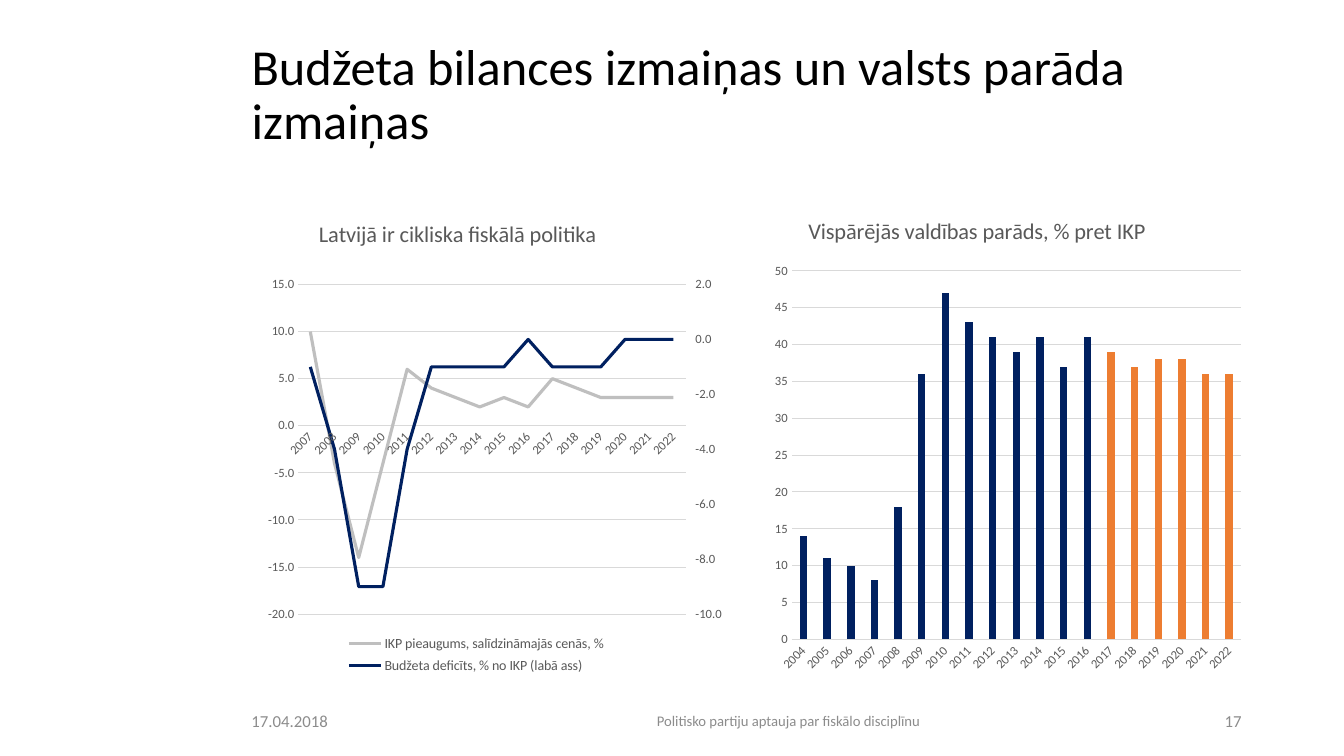
from copy import deepcopy
from dataclasses import dataclass
from typing import Any, Optional

from lxml.etree import SubElement
from pptx import Presentation
from pptx.chart.axis import CategoryAxis, ValueAxis
from pptx.chart.chart import Chart
from pptx.chart.data import CategoryChartData
from pptx.dml.color import RGBColor
from pptx.enum.chart import XL_CHART_TYPE, XL_LEGEND_POSITION, XL_TICK_MARK
from pptx.enum.text import MSO_ANCHOR, MSO_AUTO_SIZE, PP_ALIGN
from pptx.oxml.ns import qn
from pptx.util import Emu, Pt

EMU_PER_PX = 9525


@dataclass(frozen=True)
class Theme:
    font: str = "Calibri"
    black: str = "000000"
    label: str = "595959"
    footer: str = "8C8C8C"
    rule: str = "D9D9D9"
    grey: str = "BFBFBF"
    navy: str = "002060"
    orange: str = "ED7D31"
    title_size: float = 36
    chart_title_size: float = 16
    footer_size: float = 12
    event_size: float = 10.5
    legend_size: float = 10
    axis_size: float = 9


@dataclass(frozen=True)
class Box:
    left: int
    top: int
    width: int
    height: int

    def emu(self) -> list[Emu]:
        return [Emu(side * EMU_PER_PX) for side in (self.left, self.top, self.width, self.height)]


@dataclass(frozen=True)
class FooterPart:
    text: str
    box: Box
    size: float
    align: PP_ALIGN


@dataclass(frozen=True)
class ChartPart:
    """The title and plot places are px from the chart's top left corner."""
    title: str
    kind: XL_CHART_TYPE
    box: Box
    title_at: tuple[int, int]
    plot_at: tuple[int, int, int, int]
    first_year: int
    series: dict[str, list[int]]
    low: int
    high: int
    number_format: str


THEME = Theme()
TITLE = "Budžeta bilances izmaiņas un valsts parāda izmaiņas"
TITLE_BOX = Box(230, 38, 962, 107)
LEGEND_AT = (92, 408, 265, 47)
LAST_YEAR = 2022
FIRST_FORECAST_YEAR = 2017

FOOTER = [
    FooterPart("17.04.2018", Box(230, 667, 157, 38), THEME.footer_size, PP_ALIGN.LEFT),
    FooterPart("Politisko partiju aptauja par fiskālo disciplīnu",
               Box(413, 667, 676, 38), THEME.event_size, PP_ALIGN.CENTER),
    FooterPart("17", Box(1116, 667, 76, 38), THEME.footer_size, PP_ALIGN.RIGHT),
]
BALANCE = ChartPart(
    "Latvijā ir cikliska fiskālā politika", XL_CHART_TYPE.LINE, Box(229, 192, 482, 457),
    (71, 13), (55, 79, 369, 314), 2007,
    {"IKP pieaugums, salīdzināmajās cenās, %":
        [10, -4, -14, -4, 6, 4, 3, 2, 3, 2, 5, 4, 3, 3, 3, 3],
     "Budžeta deficīts, % no IKP (labā ass)":
        [-1, -4, -9, -9, -4, -1, -1, -1, -1, 0, -1, -1, -1, 0, 0, 0]},
    -20, 15, "0.0")
DEBT = ChartPart(
    "Vispārējās valdības parāds, % pret IKP", XL_CHART_TYPE.COLUMN_CLUSTERED,
    Box(730, 192, 463, 457), (36, 10), (24, 66, 428, 351), 2004,
    {"Series 1": [14, 11, 10, 8, 18, 36, 47, 43, 41, 39, 41, 37, 41, 39, 37, 38, 38, 36, 36]},
    0, 50, "#,##0")


def assign(target: Any, values: dict[str, Any]) -> None:
    for name, value in values.items():
        setattr(target, name, value)


def style_font(font: Any, size: float, color: str) -> None:
    assign(font, {"name": THEME.font, "size": Pt(size), "bold": False})
    font.color.rgb = RGBColor.from_string(color)


def style_line(line: Any, color: str, width: float) -> None:
    line.color.rgb = RGBColor.from_string(color)
    line.width = Pt(width)


def style_fill(fill: Any, color: str) -> None:
    fill.solid()
    fill.fore_color.rgb = RGBColor.from_string(color)


def write(shape: Any, text: str, size: float, color: str, align: PP_ALIGN) -> Any:
    frame = shape.text_frame
    assign(frame, {"word_wrap": True, "auto_size": MSO_AUTO_SIZE.NONE,
                   "vertical_anchor": MSO_ANCHOR.MIDDLE})
    para = frame.paragraphs[0]
    para.alignment = align
    span = para.add_run()
    span.text = text
    style_font(span.font, size, color)
    return para


def place(element: Any, index: int, chart_box: Box, at: tuple[int, ...],
          inner: bool = False) -> None:
    """Give a chart part a fixed place, in px inside the chart."""
    for old in element.findall(qn("c:layout")):
        element.remove(old)
    layout = element.makeelement(qn("c:layout"))
    element.insert(index, layout)
    manual = SubElement(layout, qn("c:manualLayout"))
    if inner:
        SubElement(manual, qn("c:layoutTarget")).set("val", "inner")
    for side in ("xMode", "yMode"):
        SubElement(manual, qn(f"c:{side}")).set("val", "edge")
    for side, length, whole in zip("xywh", at, (chart_box.width, chart_box.height) * 2):
        SubElement(manual, qn(f"c:{side}")).set("val", str(length / whole))


def add_chart(page: Any, part: ChartPart) -> Chart:
    data = CategoryChartData(number_format=part.number_format)
    data.categories = [str(year) for year in range(part.first_year, LAST_YEAR + 1)]
    for name, values in part.series.items():
        data.add_series(name, values)
    chart = page.shapes.add_chart(part.kind, *part.box.emu(), data).chart
    style_font(chart.font, THEME.legend_size, THEME.black)
    chart.has_legend = False
    chart.plots[0].vary_by_categories = False

    # Title and plot area
    chart.has_title = True
    para = chart.chart_title.text_frame.paragraphs[0]
    span = para.add_run()
    span.text = part.title
    style_font(span.font, THEME.chart_title_size, THEME.label)
    chart.chart_title.include_in_layout = False
    place(chart.chart_title._element, 1, part.box, part.title_at)
    place(chart._chartSpace.chart.plotArea, 0, part.box, part.plot_at, inner=True)

    # Axes
    for axis in (chart.category_axis, chart.value_axis):
        assign(axis, {"major_tick_mark": XL_TICK_MARK.NONE, "minor_tick_mark": XL_TICK_MARK.NONE})
        style_font(axis.tick_labels.font, THEME.axis_size, THEME.label)
    years, scale = chart.category_axis, chart.value_axis
    style_line(years.format.line, THEME.rule, 0.75)
    years._element.find(qn("c:txPr")).find(qn("a:bodyPr")).set("rot", "-2700000")
    assign(scale, {"minimum_scale": part.low, "maximum_scale": part.high, "major_unit": 5,
                   "has_major_gridlines": True})
    assign(scale.tick_labels, {"number_format": part.number_format,
                               "number_format_is_linked": False})
    style_line(scale.major_gridlines.format.line, THEME.rule, 0.75)
    scale.format.line.fill.background()
    return chart


def add_right_axis(chart: Chart, low: int, high: int, unit: int) -> None:
    """Move the last series to a second value axis on the right."""
    left_plot = chart.plots[0]._element
    right_plot = deepcopy(left_plot)
    left_plot.remove(left_plot.findall(qn("c:ser"))[-1])
    right_plot.remove(right_plot.find(qn("c:ser")))
    left_plot.addnext(right_plot)
    years, scale = (deepcopy(axis._element) for axis in (chart.category_axis, chart.value_axis))
    year_id, scale_id = "50010", "50020"
    for reference, number in zip(right_plot.findall(qn("c:axId")), (year_id, scale_id)):
        reference.set("val", number)
    for element, own, other in ((years, year_id, scale_id), (scale, scale_id, year_id)):
        element.find(qn("c:axId")).set("val", own)
        element.find(qn("c:crossAx")).set("val", other)
    chart.value_axis._element.addnext(scale)
    scale.addnext(years)
    CategoryAxis(years).visible = False
    scale.find(qn("c:axPos")).set("val", "r")
    scale.find(qn("c:crosses")).set("val", "max")
    assign(ValueAxis(scale), {"has_major_gridlines": False, "minimum_scale": low,
                              "maximum_scale": high, "major_unit": unit,
                              "major_tick_mark": XL_TICK_MARK.OUTSIDE})


def draw_balance(page: Any) -> None:
    chart = add_chart(page, BALANCE)
    for series, color in zip(chart.plots[0].series, (THEME.grey, THEME.navy)):
        series.smooth = False
        style_line(series.format.line, color, 2.25)
    add_right_axis(chart, -10, 2, 2)
    chart.has_legend = True
    assign(chart.legend, {"position": XL_LEGEND_POSITION.BOTTOM, "include_in_layout": False})
    style_font(chart.legend.font, THEME.legend_size, THEME.label)
    place(chart.legend._element, 1, BALANCE.box, LEGEND_AT)


def draw_debt(page: Any) -> None:
    plot = add_chart(page, DEBT).plots[0]
    assign(plot, {"gap_width": 219, "overlap": -27})
    debt = plot.series[0]
    debt.invert_if_negative = False
    style_fill(debt.format.fill, THEME.navy)
    for year in range(FIRST_FORECAST_YEAR, LAST_YEAR + 1):
        style_fill(debt.points[year - DEBT.first_year].format.fill, THEME.orange)


def main() -> None:
    deck = Presentation()
    assign(deck, {"slide_width": Emu(1280 * EMU_PER_PX), "slide_height": Emu(720 * EMU_PER_PX)})
    page = deck.slides.add_slide(deck.slide_layouts[5])
    # Title and footer
    title: Optional[Any] = page.shapes.title
    assign(title, dict(zip(("left", "top", "width", "height"), TITLE_BOX.emu())))
    write(title, TITLE, THEME.title_size, THEME.black, PP_ALIGN.LEFT).line_spacing = 0.9
    for part in FOOTER:
        write(page.shapes.add_textbox(*part.box.emu()), part.text, part.size, THEME.footer,
              part.align)
    # Charts
    draw_balance(page)
    draw_debt(page)
    deck.save("out.pptx")


if __name__ == "__main__":
    main()
